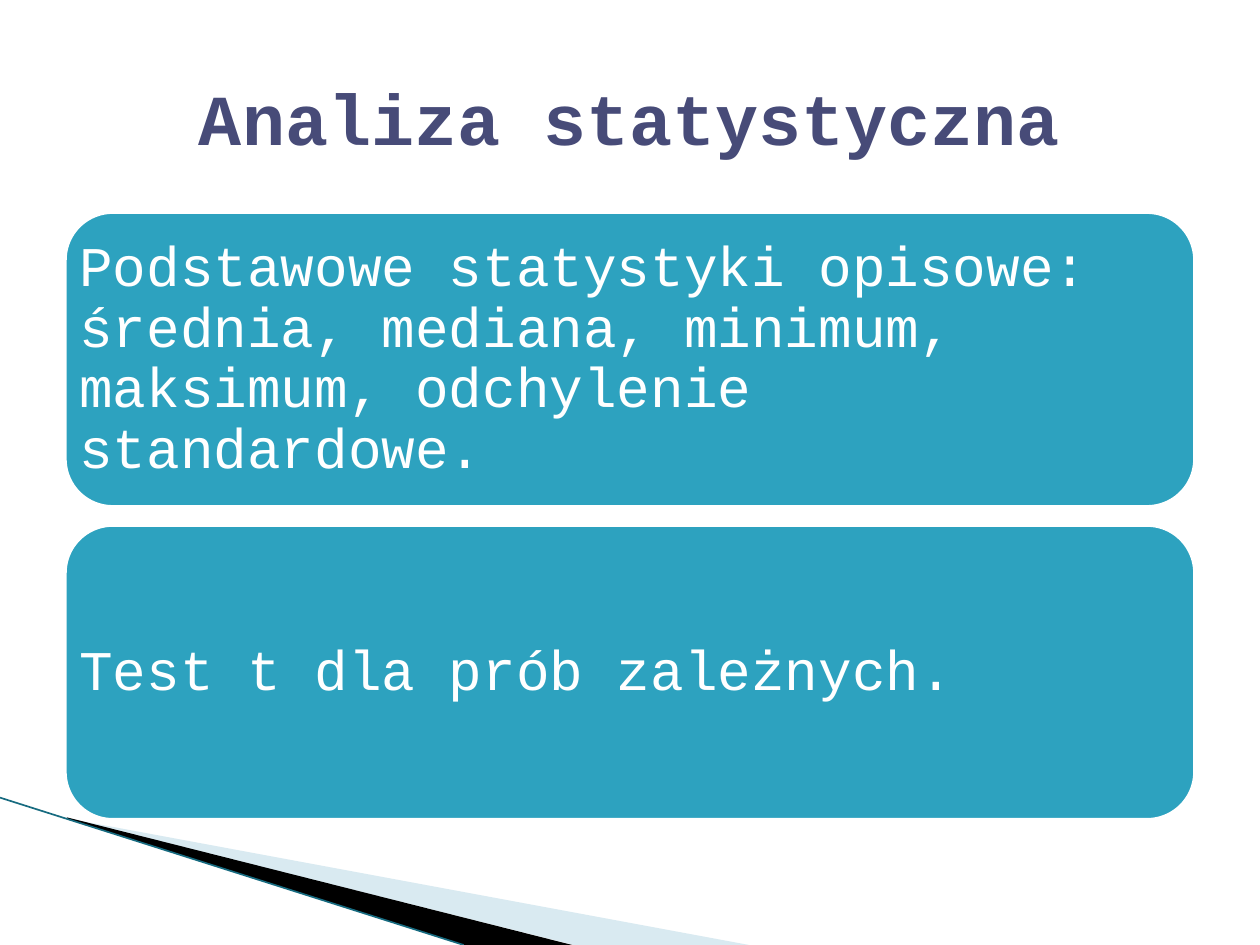
import pptx
import pptx.util
import pptx.dml.color
import pptx.enum.shapes
import pptx.enum.text
import pptx.oxml.ns
from lxml import etree

Pt = pptx.util.Pt
RGBColor = pptx.dml.color.RGBColor
ALIGN = pptx.enum.text.PP_ALIGN
MIDDLE = pptx.enum.text.MSO_ANCHOR.MIDDLE
qn = pptx.oxml.ns.qn

TITLE = "Analiza statystyczna"
METHODS = [
    "Podstawowe statystyki opisowe: średnia, mediana, minimum, maksimum, odchylenie standardowe.",
    "Test t dla prób zależnych.",
]
FONT = "Courier New"

WHITE = RGBColor(0xFF, 0xFF, 0xFF)
BLACK = RGBColor(0x00, 0x00, 0x00)
TEAL = RGBColor(0x2D, 0xA2, 0xBF)
DARK_TEAL = RGBColor(0x17, 0x6B, 0x80)
PALE_BLUE = RGBColor(0xA0, 0xCB, 0xDC)
NAVY = RGBColor(0x47, 0x4B, 0x78)

SLIDE_WIDTH, SLIDE_HEIGHT = 720, 540
MARGIN = 36
CONTENT_WIDTH = SLIDE_WIDTH - 2 * MARGIN
TITLE_TOP, TITLE_HEIGHT = 21.6, 90
CARD_TOP, CARD_HEIGHT, CARD_GAP = 120.1, 170.7, 8.1
CARD_INSET = 1

WEDGES = [
    ([(39.6, 468.4), (428, 540), (328.3, 540), (39.6, 468)], PALE_BLUE, 40),
    ([(38.2, 467.3), (327, 540), (265, 540), (38.9, 468)], BLACK, 100),
]
EDGE = [(0, 455.8), (265, 540)]


def write(frame, text, size, color, align, bold=False):
    frame.text = text
    frame.word_wrap = True
    frame.vertical_anchor = MIDDLE
    paragraph = frame.paragraphs[0]
    paragraph.alignment = align
    font = paragraph.runs[0].font
    font.name, font.size, font.bold = FONT, Pt(size), bold
    font.color.rgb = color
    return paragraph


def add_wedge(slide, points, color, opacity):
    builder = slide.shapes.build_freeform(*points[0], scale=Pt(1))
    builder.add_line_segments(points[1:], close=True)
    wedge = builder.convert_to_shape()
    wedge.shadow.inherit = False
    wedge.fill.solid()
    wedge.fill.fore_color.rgb = color
    wedge.line.fill.background()
    if opacity < 100:
        tint = wedge.fill._xPr.find(".//" + qn("a:srgbClr"))
        etree.SubElement(tint, qn("a:alpha"), val=str(opacity * 1000))


def add_edge(slide):
    ends = [Pt(length) for point in EDGE for length in point]
    edge = slide.shapes.add_connector(pptx.enum.shapes.MSO_CONNECTOR.STRAIGHT, *ends)
    edge.line.color.rgb = DARK_TEAL
    edge.line.width = Pt(0.95)
    etree.SubElement(edge._element.spPr, qn("a:effectLst"))


def add_card(slide, index, text):
    top = CARD_TOP + index * (CARD_HEIGHT + CARD_GAP)
    card = slide.shapes.add_shape(
        pptx.enum.shapes.MSO_SHAPE.ROUNDED_RECTANGLE,
        Pt(MARGIN), Pt(top), Pt(CONTENT_WIDTH), Pt(CARD_HEIGHT))
    card.shadow.inherit = False
    card.fill.solid()
    card.fill.fore_color.rgb = TEAL
    card.line.color.rgb = WHITE
    card.line.width = Pt(4.33)
    frame = card.text_frame
    frame.margin_left = frame.margin_right = Pt(CARD_INSET)
    frame.margin_top = frame.margin_bottom = Pt(CARD_INSET)
    write(frame, text, 32, WHITE, ALIGN.LEFT).line_spacing = 0.9


def main():
    deck = pptx.Presentation()
    deck.slide_width, deck.slide_height = Pt(SLIDE_WIDTH), Pt(SLIDE_HEIGHT)
    slide = deck.slides.add_slide(deck.slide_layouts[6])
    for points, color, opacity in WEDGES:
        add_wedge(slide, points, color, opacity)
    add_edge(slide)
    for index, text in enumerate(METHODS):
        add_card(slide, index, text)
    title = slide.shapes.add_textbox(
        Pt(MARGIN), Pt(TITLE_TOP), Pt(CONTENT_WIDTH), Pt(TITLE_HEIGHT))
    write(title.text_frame, TITLE, 41, NAVY, ALIGN.CENTER, bold=True)
    deck.save("out.pptx")


if __name__ == "__main__":
    main()
